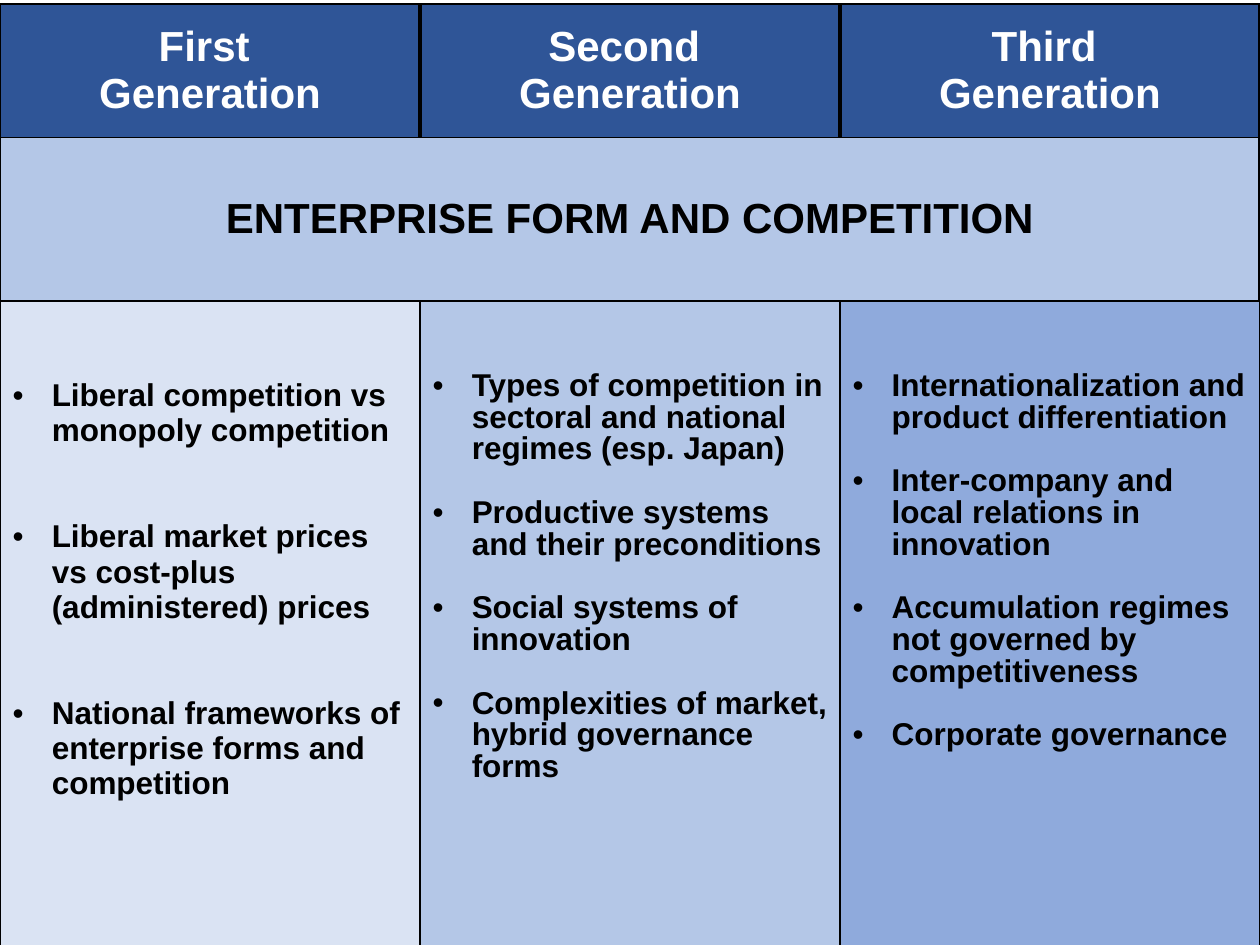
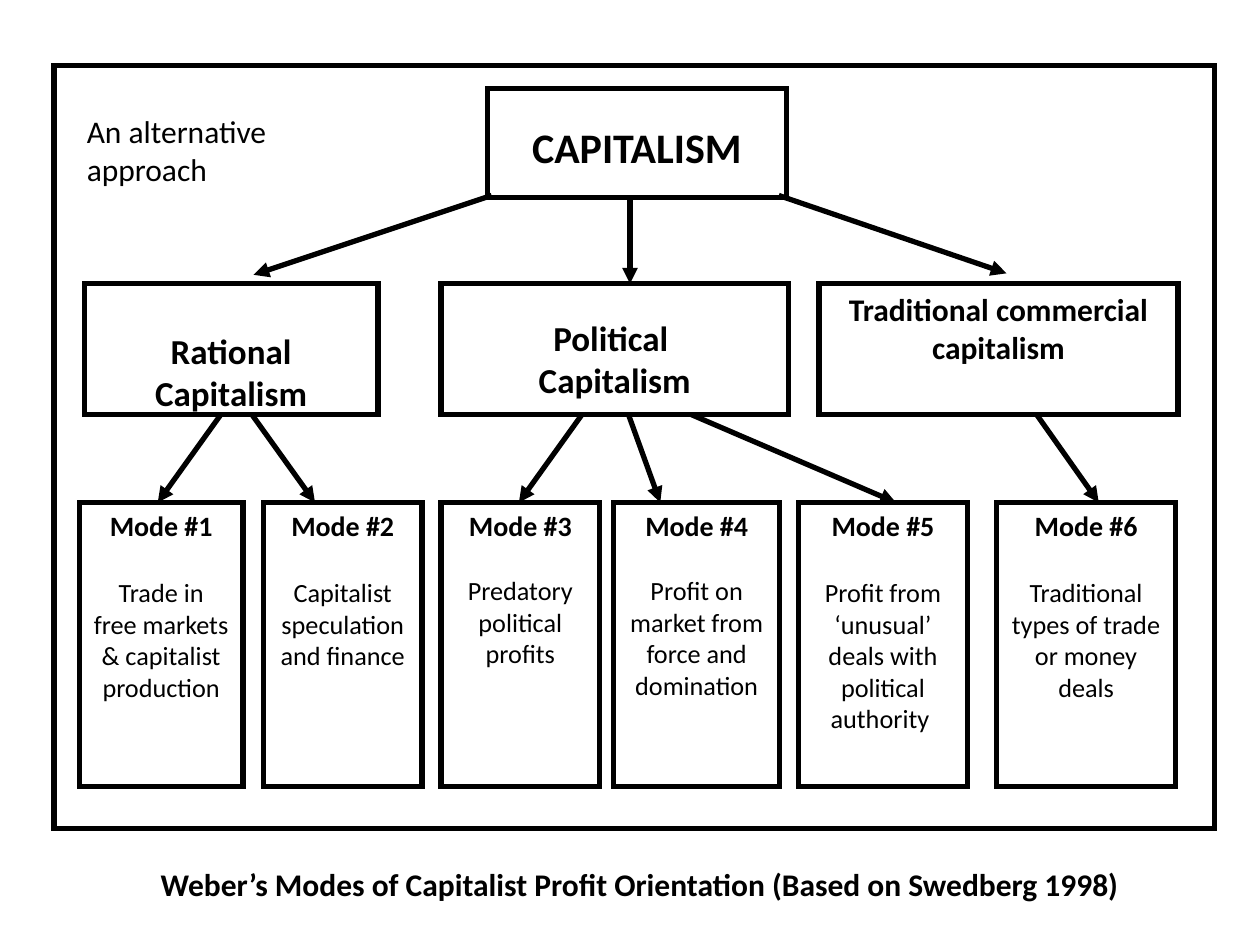
from lxml import etree
from pptx import Presentation
from pptx.dml.color import RGBColor
from pptx.enum.shapes import MSO_CONNECTOR, MSO_SHAPE
from pptx.enum.text import MSO_ANCHOR, PP_ALIGN
from pptx.oxml.ns import qn
from pptx.util import Cm, Pt

LEFT, CENTER = PP_ALIGN.LEFT, PP_ALIGN.CENTER
TOP, MIDDLE = MSO_ANCHOR.TOP, MSO_ANCHOR.MIDDLE
RECT, STRAIGHT = MSO_SHAPE.RECTANGLE, MSO_CONNECTOR.STRAIGHT


class Theme:
    black = RGBColor.from_string("000000")
    white = RGBColor.from_string("FFFFFF")
    header = RGBColor.from_string("2F5597")
    band = RGBColor.from_string("B4C7E7")
    columns = [RGBColor.from_string(c) for c in ("DAE3F3", "B4C7E7", "8FAADC")]
    table_font, chart_font = "Arial", "Calibri"
    heading, branch, body, mode, detail = 24, 20, 18, 16, 15
    outline, thin, thick = 3, 1, 2.25


def add_xml(parent, tag, index=None, **attrs):
    """Add a DrawingML child, at the end unless an index is given."""
    child = etree.Element(qn(tag), attrs)
    parent.insert(len(parent) if index is None else index, child)
    return child


def write(tf, lines, size, font, bold=True, color=Theme.black, **layout):
    """Append one paragraph per line; layout holds paragraph attributes."""
    added = []
    for line in lines:
        p = tf.paragraphs[0]
        if p.runs:
            p = tf.add_paragraph()
        for name, value in layout.items():
            setattr(p, name, value)
        r = p.add_run()
        r.text = line
        for name, value in {"size": Pt(size), "name": font, "bold": bold}.items():
            setattr(r.font, name, value)
        r.font.color.rgb = color
        added.append(p)
    return added


prs = Presentation()
prs.slide_width, prs.slide_height = Cm(25.4), Cm(19.05)
blank = prs.slide_layouts[6]

# Slide 1: three generations compared
s = prs.slides.add_slide(blank)
row_heights = [2.69, 3.3, 13]
table = s.shapes.add_table(3, 3, 0, Cm(0.08), Cm(25.4), Cm(sum(row_heights))).table
table.first_row = table.horz_banding = False
for row, height in zip(table.rows, row_heights):
    row.height = Cm(height)
for column in table.columns:
    column.width = Cm(25.4 / 3)

fills = [[Theme.header] * 3, [Theme.band] * 3, Theme.columns]
for i, row in enumerate(table.rows):
    for j, cell in enumerate(row.cells):
        cell.fill.solid()
        cell.fill.fore_color.rgb = fills[i][j]
        cell.vertical_anchor = TOP if i == 2 else MIDDLE
        borders = {
            "a:lnL": Theme.thick if i == 0 and j > 0 else Theme.thin,
            "a:lnR": Theme.thick if i < 2 else Theme.thin,
            "a:lnT": Theme.thin,
            "a:lnB": Theme.thin,
        }
        for k, (tag, width) in enumerate(borders.items()):
            ln = add_xml(cell._tc.get_or_add_tcPr(), tag, k, w=str(Pt(width)))
            add_xml(add_xml(ln, "a:solidFill"), "a:srgbClr", val=str(Theme.black))

for j, ordinal in enumerate(["First ", "Second ", "Third "]):
    write(table.cell(0, j).text_frame, [ordinal, "Generation"], Theme.heading,
          Theme.table_font, color=Theme.white, alignment=CENTER)

topic = table.cell(1, 0)
topic.merge(table.cell(1, 2))
write(topic.text_frame, ["ENTERPRISE FORM AND COMPETITION"], Theme.heading,
      Theme.table_font, alignment=CENTER)

# Top margin (cm), line spacing, gap between points (pt), points
generations = [
    (1.55, 1.0, 40.4, [
        "Liberal competition vs monopoly competition",
        "Liberal market prices vs cost-plus (administered) prices",
        "National frameworks of enterprise forms and competition"]),
    (1.41, 0.9, 18.2, [
        "Types of competition in sectoral and national regimes (esp. Japan)",
        "Productive systems and their preconditions",
        "Social systems of innovation",
        "Complexities of market, hybrid governance forms"]),
    (1.41, 0.9, 18.2, [
        "Internationalization and product differentiation",
        "Inter-company and local relations in innovation",
        "Accumulation regimes not governed by competitiveness",
        "Corporate governance"]),
]
for j, (margin, spacing, gap, points) in enumerate(generations):
    cell = table.cell(2, j)
    cell.margin_top = Cm(margin)
    paragraphs = write(cell.text_frame, points, Theme.body, Theme.table_font,
                       line_spacing=spacing, alignment=LEFT)
    for k, p in enumerate(paragraphs):
        p.space_before = Pt(gap if k else 0)
        pPr = p._p.get_or_add_pPr()
        pPr.set("marL", str(Cm(0.79)))
        pPr.set("indent", str(-Cm(0.79)))
        add_xml(pPr, "a:buFont", typeface=Theme.table_font)
        add_xml(pPr, "a:buChar", char="•")

# Slide 2: tree of capitalist modes
s = prs.slides.add_slide(blank)
branch_top, branch_height = 5.72, 2.64
mode_top, mode_height = 10.13, 5.72

# Left, top, width, height, top inset (cm), type size, heading lines, gap (pt), details
boxes = [
    (1.09, 1.32, 23.39, 15.39, 0.13, Theme.body, [], 0, []),
    (9.83, 1.78, 6.02, 2.21, 0.66, Theme.heading, ["CAPITALISM"], 0, []),
    (1.7, branch_top, 5.92, branch_height, 0.93, Theme.branch,
     ["Rational Capitalism"], 0, []),
    (8.89, branch_top, 7.01, branch_height, 0.66, Theme.branch,
     ["Political ", "Capitalism"], 0, []),
    (16.51, branch_top, 7.24, branch_height, 0.13, Theme.body,
     ["Traditional commercial capitalism"], 0, []),
]
modes = [
    (1.6, 3.3, 19.5, ["Trade in", "free markets & capitalist production"]),
    (5.31, 3.2, 19.5, ["Capitalist speculation and finance"]),
    (8.89, 3.2, 18.3, ["Predatory political profits"]),
    (12.37, 3.35, 18.3, ["Profit on market from force and domination"]),
    (16.1, 3.4, 19.5, ["Profit from ‘unusual’ deals with political authority "]),
    (20.09, 3.61, 19.5, ["Traditional types of trade or money deals"]),
]
for number, (left, width, gap, details) in enumerate(modes, 1):
    boxes.append((left, mode_top, width, mode_height, 0.13, Theme.mode,
                  [f"Mode #{number}"], gap, details))

for left, top, width, height, inset, size, heading, gap, details in boxes:
    sp = s.shapes.add_shape(RECT, Cm(left), Cm(top), Cm(width), Cm(height))
    sp.shadow.inherit = False
    sp.fill.solid()
    sp.fill.fore_color.rgb = Theme.white
    sp.line.color.rgb = Theme.black
    sp.line.width = Pt(Theme.outline)
    add_xml(sp.line._get_or_add_ln(), "a:miter", lim="800000")
    tf = sp.text_frame
    for name, value in {"word_wrap": True, "vertical_anchor": TOP,
                        "margin_top": Cm(inset)}.items():
        setattr(tf, name, value)
    write(tf, heading, size, Theme.chart_font, alignment=CENTER)
    paragraphs = write(tf, details, Theme.detail, Theme.chart_font, bold=False,
                       alignment=CENTER)
    if paragraphs:
        paragraphs[0].space_before = Pt(gap)

# Start x, start y, end x, end y
arrows = [
    (12.7, 3.94, 12.7, branch_top),
    (9.91, 3.94, 5.11, 5.54),
    (15.7, 3.94, 20.29, 5.51),
]
branch_bottom = branch_top + branch_height
for start, end in [(4.45, 3.18), (5.08, 6.35), (11.73, 10.46),
                   (12.67, 13.31), (13.94, 18.06), (20.9, 22.15)]:
    arrows.append((start, branch_bottom, end, mode_top))

for ends in arrows:
    arrow = s.shapes.add_connector(STRAIGHT, *[Cm(v) for v in ends])
    arrow.line.color.rgb = Theme.black
    arrow.line.width = Pt(Theme.outline)
    add_xml(arrow.line._get_or_add_ln(), "a:tailEnd", type="triangle")
    add_xml(arrow._element.spPr, "a:effectLst")

captions = [
    (1.7, 17.32, 22.4, 1.02, True, CENTER,
     "Weber’s Modes of Capitalist Profit Orientation (Based on Swedberg 1998)"),
    (1.5, 2.13, 5.99, 1.8, False, LEFT, "An alternative approach"),
]
for left, top, width, height, bold, alignment, text in captions:
    tf = s.shapes.add_textbox(Cm(left), Cm(top), Cm(width), Cm(height)).text_frame
    tf.word_wrap = True
    write(tf, [text], Theme.body, Theme.chart_font, bold=bold, alignment=alignment)

prs.save("out.pptx")
